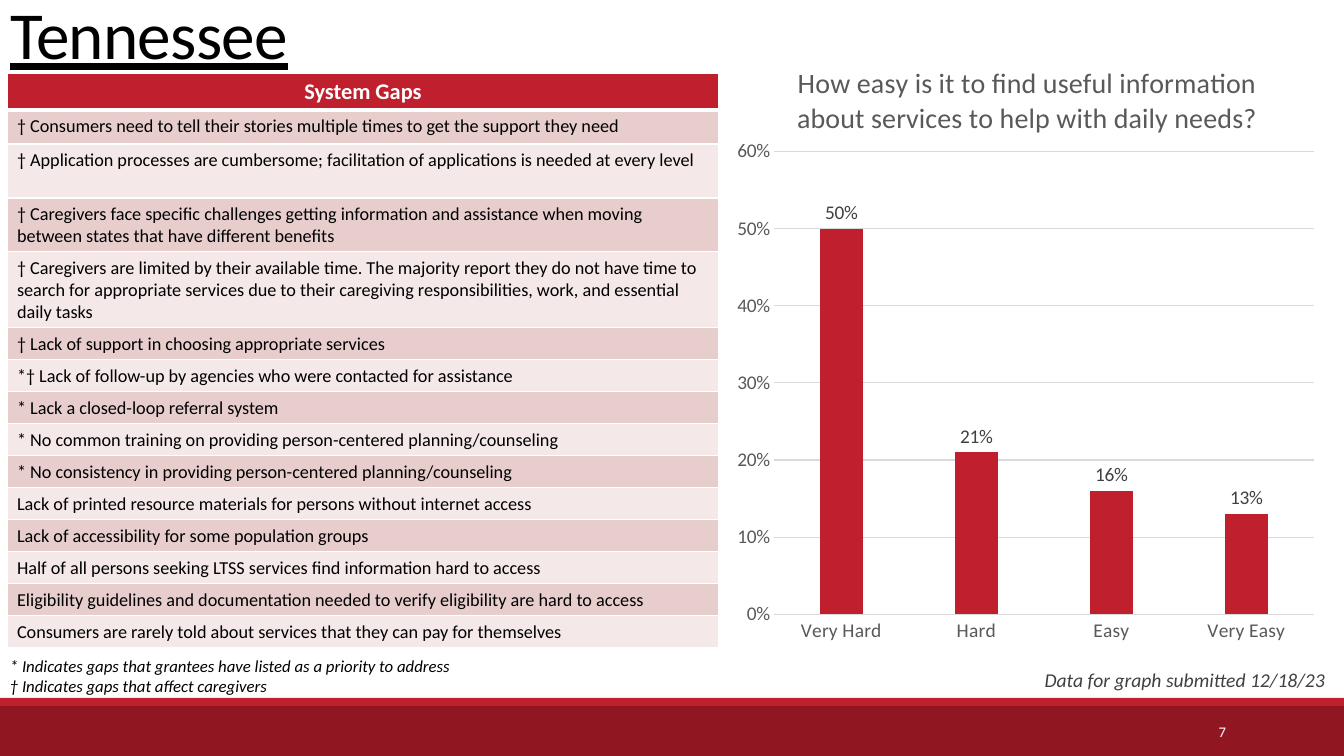
from lxml.etree import SubElement
from pptx import Presentation
from pptx.chart.data import CategoryChartData
from pptx.dml.color import RGBColor
from pptx.enum.chart import XL_CHART_TYPE, XL_LABEL_POSITION, XL_TICK_MARK
from pptx.enum.shapes import MSO_SHAPE
from pptx.enum.text import MSO_ANCHOR, MSO_AUTO_SIZE, PP_ALIGN
from pptx.oxml import parse_xml
from pptx.oxml.ns import nsdecls, qn
from pptx.util import Pt

STATE = "Tennessee"
GAPS_HEADING = "System Gaps"
GAPS = [
    ("† Consumers need to tell their stories multiple times to get the support they need", 34),
    ("† Application processes are cumbersome; facilitation of applications is needed at every level", 54),
    ("† Caregivers face specific challenges getting information and assistance when moving between states that have different benefits", 54),
    ("† Caregivers are limited by their available time. The majority report they do not have time to search for appropriate services due to their caregiving responsibilities, work, and essential daily tasks", 76),
    ("† Lack of support in choosing appropriate services", 32),
    ("*† Lack of follow-up by agencies who were contacted for assistance", 32),
    ("* Lack a closed-loop referral system", 32),
    ("* No common training on providing person-centered planning/counseling", 32),
    ("* No consistency in providing person-centered planning/counseling", 32),
    ("Lack of printed resource materials for persons without internet access", 32),
    ("Lack of accessibility for some population groups", 32),
    ("Half of all persons seeking LTSS services find information hard to access", 32),
    ("Eligibility guidelines and documentation needed to verify eligibility are hard to access", 32),
    ("Consumers are rarely told about services that they can pay for themselves", 32),
]
HEADING_HEIGHT = 36
LEGEND = [
    "* Indicates gaps that grantees have listed as a priority to address",
    "† Indicates gaps that affect caregivers",
]
QUESTION = "How easy is it to find useful information about services to help with daily needs?"
ANSWERS = {"Very Hard": 0.5, "Hard": 0.21, "Easy": 0.16, "Very Easy": 0.13}
DATA_NOTE = "Data for graph submitted 12/18/23"
PAGE = "7"
FONT = "Calibri"
RED, DARK_RED, WHITE, BLACK = "C01F2E", "901722", "FFFFFF", "000000"
GREY, DARK_GREY, RULE = "595959", "404040", "D9D9D9"
BANDS = ["E8CDCD", "F4E8E8"]
SCALE = 914400 / 100.8


def px(*lengths):
    return [round(length * SCALE) for length in lengths]


def color(code):
    return RGBColor.from_string(code)


def style(font, size, code, bold=False, italic=False):
    font.name, font.size, font.bold, font.italic = FONT, Pt(size), bold, italic
    font.color.rgb = color(code)


def add_bar(box, code):
    bar = slide.shapes.add_shape(MSO_SHAPE.RECTANGLE, *px(*box))
    bar.shadow.inherit = False
    bar.fill.solid()
    bar.fill.fore_color.rgb = color(code)
    bar.line.fill.background()


def add_text(box, lines, size, code, align, italic=False, anchor=MSO_ANCHOR.TOP):
    frame = slide.shapes.add_textbox(*px(*box)).text_frame
    frame.word_wrap = True
    frame.vertical_anchor = anchor
    frame.text = "\n".join(lines)
    for paragraph in frame.paragraphs:
        paragraph.alignment = align
        style(paragraph.font, size, code, italic=italic)


def fill_cell(cell, text, size, code, fill, bottom=1, bold=False, align=PP_ALIGN.LEFT):
    cell.text = text
    paragraph = cell.text_frame.paragraphs[0]
    paragraph.alignment = align
    style(paragraph.font, size, code, bold)
    cell.fill.solid()
    cell.fill.fore_color.rgb = color(fill)
    properties = cell._tc.get_or_add_tcPr()
    for place, (side, width) in enumerate([("L", 1), ("R", 1), ("T", 1), ("B", bottom)]):
        properties.insert(place, parse_xml(
            f'<a:ln{side} {nsdecls("a")} w="{Pt(width)}"><a:solidFill>'
            f'<a:srgbClr val="{WHITE}"/></a:solidFill></a:ln{side}>'))


def place(layout_owner, inner=False, **fractions):
    layout = layout_owner.find(qn("c:layout"))
    if layout is None:
        layout = SubElement(layout_owner, qn("c:layout"))
        layout_owner.remove(layout)
        before = layout_owner.find(qn("c:tx"))
        layout_owner.insert(0 if before is None else layout_owner.index(before) + 1, layout)
    for child in list(layout):
        layout.remove(child)
    manual = SubElement(layout, qn("c:manualLayout"))
    if inner:
        SubElement(manual, qn("c:layoutTarget"), val="inner")
    for key in ("x", "y"):
        SubElement(manual, qn(f"c:{key}Mode"), val="edge")
    for key, value in fractions.items():
        SubElement(manual, qn(f"c:{key}"), val=str(value))


deck = Presentation()
deck.slide_width, deck.slide_height = px(1344, 756)
slide = deck.slides.add_slide(deck.slide_layouts[5])

add_bar((0, 706, 1344, 50), DARK_RED)
add_bar((0, 698, 1344, 8), RED)
add_text((1092, 712, 144, 40), [PAGE], 10.5, WHITE, PP_ALIGN.RIGHT, anchor=MSO_ANCHOR.MIDDLE)

title = slide.shapes.title
title.left, title.top, title.width, title.height = px(0, 0, 1236, 84)
title.text_frame.text = STATE
title.text_frame.auto_size = MSO_AUTO_SIZE.NONE
title.text_frame.vertical_anchor = MSO_ANCHOR.TOP
heading = title.text_frame.paragraphs[0]
heading.alignment = PP_ALIGN.LEFT
heading.line_spacing = 0.85
style(heading.font, 48, BLACK)
heading.font.underline = True
heading.runs[0].font._element.set("spc", "-50")

heights = [HEADING_HEIGHT] + [height for _, height in GAPS]
gaps = slide.shapes.add_table(len(heights), 1, *px(7, 73, 712, sum(heights))).table
for row, height in zip(gaps.rows, heights):
    row.height = px(height)[0]
fill_cell(gaps.cell(0, 0), GAPS_HEADING, 16, WHITE, RED, 3, True, PP_ALIGN.CENTER)
for index, (gap, _) in enumerate(GAPS):
    fill_cell(gaps.cell(index + 1, 0), gap, 13, BLACK, BANDS[index % 2])

add_text((0, 651, 469, 50), LEGEND, 12, BLACK, PP_ALIGN.LEFT, italic=True)

data = CategoryChartData(number_format="0%")
data.categories = list(ANSWERS)
data.add_series("Series 1", list(ANSWERS.values()))
chart = slide.shapes.add_chart(
    XL_CHART_TYPE.COLUMN_CLUSTERED, *px(726, 33, 600, 625), data).chart
style(chart.font, 13.8, BLACK)
chart.has_legend = False
chart.has_title = True
chart.chart_title.include_in_layout = False
chart.chart_title.text_frame.text = QUESTION
style(chart.chart_title.text_frame.paragraphs[0].font, 20, GREY)
place(chart.chart_title._element, x=0.11, y=0.04)
place(chart._chartSpace.chart.plotArea, inner=True, x=0.08, y=0.19, w=0.9, h=0.74)

answers, shares = chart.category_axis, chart.value_axis
for axis, size in ((answers, 13.9), (shares, 13.8)):
    axis.major_tick_mark = axis.minor_tick_mark = XL_TICK_MARK.NONE
    style(axis.tick_labels.font, size, GREY)
shares.minimum_scale, shares.maximum_scale, shares.major_unit = 0, 0.6, 0.1
shares.tick_labels.number_format = "0%"
shares.tick_labels.number_format_is_linked = False
shares.format.line.fill.background()
for line in (answers.format.line, shares.major_gridlines.format.line):
    line.color.rgb = color(RULE)
    line.width = Pt(0.75)

plot = chart.plots[0]
plot.vary_by_categories = False
plot.gap_width, plot.overlap = 219, -27
columns = plot.series[0]
columns.format.fill.solid()
columns.format.fill.fore_color.rgb = color(RED)
labels = columns.data_labels
labels.show_value = True
labels.position = XL_LABEL_POSITION.OUTSIDE_END
labels.number_format, labels.number_format_is_linked = "0%", False
style(labels.font, 13.8, DARK_GREY)

add_text((1030, 663, 310, 34), [DATA_NOTE], 14, DARK_GREY, PP_ALIGN.CENTER, italic=True)

deck.save("out.pptx")
